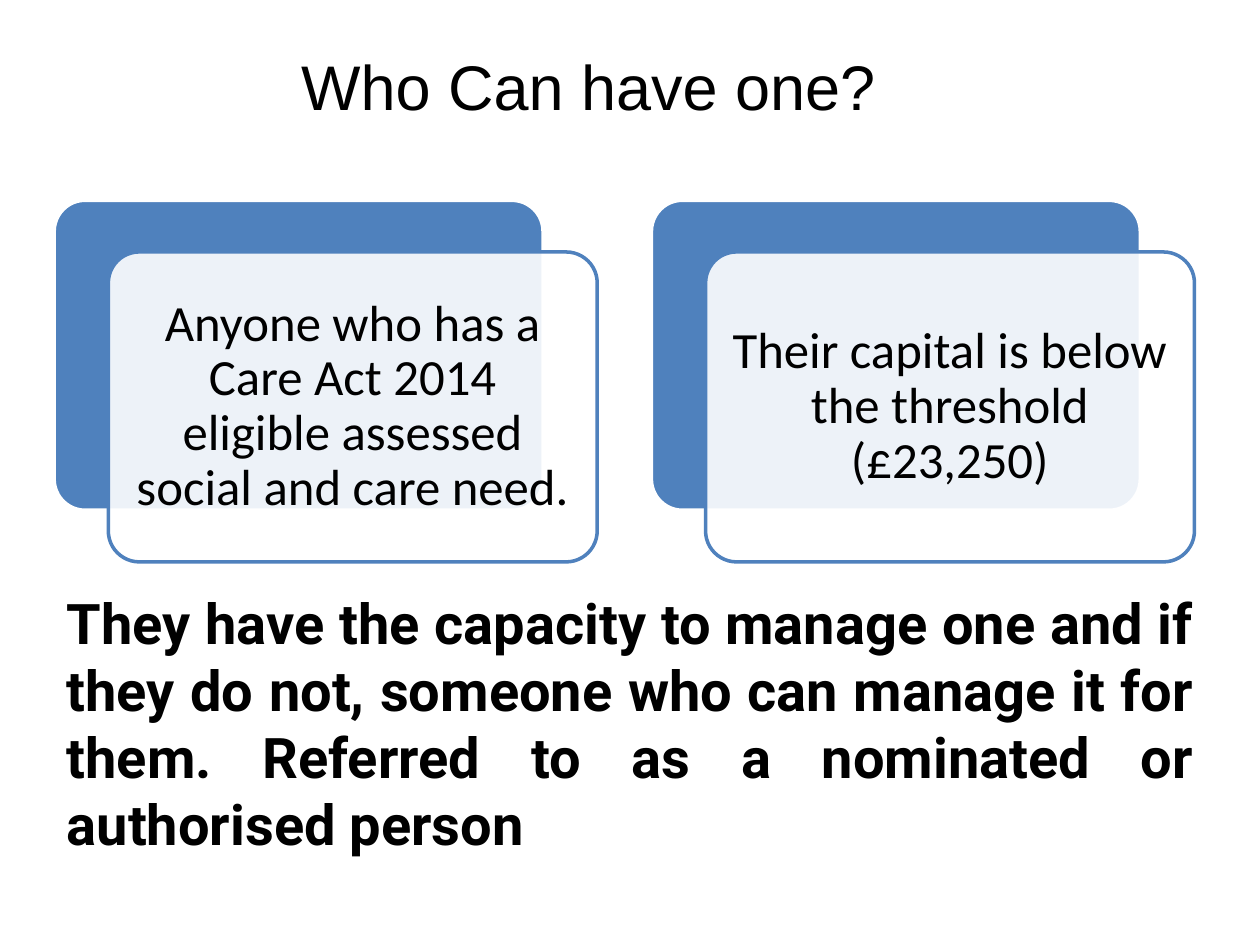
from lxml import etree
from pptx import Presentation
from pptx.dml.color import RGBColor
from pptx.enum.shapes import MSO_SHAPE
from pptx.enum.text import MSO_ANCHOR, MSO_AUTO_SIZE, PP_ALIGN
from pptx.oxml.ns import qn
from pptx.util import Inches, Pt

ROUNDED = MSO_SHAPE.ROUNDED_RECTANGLE
MIDDLE = MSO_ANCHOR.MIDDLE
CENTER, JUSTIFY = PP_ALIGN.CENTER, PP_ALIGN.JUSTIFY
BLUE = RGBColor(0x4F, 0x81, 0xBD)
WHITE = RGBColor(0xFF, 0xFF, 0xFF)
BLACK = RGBColor(0x00, 0x00, 0x00)

TITLE_ONLY_LAYOUT = 5
CARD_WIDTH, CARD_HEIGHT = 3.88, 2.46
CARD_LEFT, CARD_TOP, CARD_PITCH = 0.43, 1.59, 4.74
FRONT_SHIFT_X, FRONT_SHIFT_Y = 0.43, 0.41
CRITERIA = [
    "Anyone who has a Care Act 2014 eligible assessed social and care need.",
    "Their capital is below the threshold (£23,250)",
]
CAPACITY_NOTE = (
    "They have the capacity to manage one and if they do not, someone who can "
    "manage it for them. Referred to as a nominated or authorised person"
)


def write_text(shape, text, font_name, size, alignment, bold=False):
    text_frame = shape.text_frame
    text_frame.text = text
    text_frame.word_wrap = True
    paragraph = text_frame.paragraphs[0]
    paragraph.alignment = alignment
    font = paragraph.runs[0].font
    font.name = font_name
    font.size = Pt(size)
    font.bold = bold
    font.color.rgb = BLACK


def add_title(slide, text):
    title = slide.shapes.title
    title.left, title.top = Inches(1.46), Inches(0.13)
    title.width, title.height = Inches(6.42), Inches(1.09)
    write_text(title, text, "Arial", 36, CENTER)
    title.text_frame.vertical_anchor = MIDDLE


def add_card(slide, left, top, fill_color, line_color):
    card = slide.shapes.add_shape(
        ROUNDED, Inches(left), Inches(top), Inches(CARD_WIDTH), Inches(CARD_HEIGHT)
    )
    card.adjustments[0] = 0.1
    card.shadow.inherit = False
    card.fill.solid()
    card.fill.fore_color.rgb = fill_color
    card.line.color.rgb = line_color
    card.line.width = Pt(2)
    return card


def set_opacity(shape, percent):
    color = shape.fill._xPr.find(qn("a:solidFill"))[0]
    etree.SubElement(color, qn("a:alpha"), val=str(percent * 1000))


def add_criterion(slide, left, text):
    """Add a blue card with a translucent text card offset in front of it."""
    add_card(slide, left, CARD_TOP, BLUE, WHITE)
    front = add_card(
        slide, left + FRONT_SHIFT_X, CARD_TOP + FRONT_SHIFT_Y, WHITE, BLUE
    )
    set_opacity(front, 90)
    write_text(front, text, "Calibri", 29, CENTER)
    text_frame = front.text_frame
    text_frame.vertical_anchor = MIDDLE
    text_frame.margin_left = text_frame.margin_right = Inches(0.12)
    text_frame.margin_top = text_frame.margin_bottom = Inches(0.12)
    text_frame.paragraphs[0].line_spacing = 0.9


def add_note(slide, text):
    note = slide.shapes.add_textbox(
        Inches(0.43), Inches(4.62), Inches(9.15), Inches(2.26)
    )
    write_text(note, text, "Roboto", 32, JUSTIFY, bold=True)
    note.text_frame.auto_size = MSO_AUTO_SIZE.SHAPE_TO_FIT_TEXT


def main():
    presentation = Presentation()
    presentation.slide_width = Inches(10)
    presentation.slide_height = Inches(7.5)
    slide = presentation.slides.add_slide(
        presentation.slide_layouts[TITLE_ONLY_LAYOUT]
    )
    add_title(slide, "Who Can have one?")
    for index, criterion in enumerate(CRITERIA):
        add_criterion(slide, CARD_LEFT + index * CARD_PITCH, criterion)
    add_note(slide, CAPACITY_NOTE)
    presentation.save("out.pptx")


if __name__ == "__main__":
    main()
